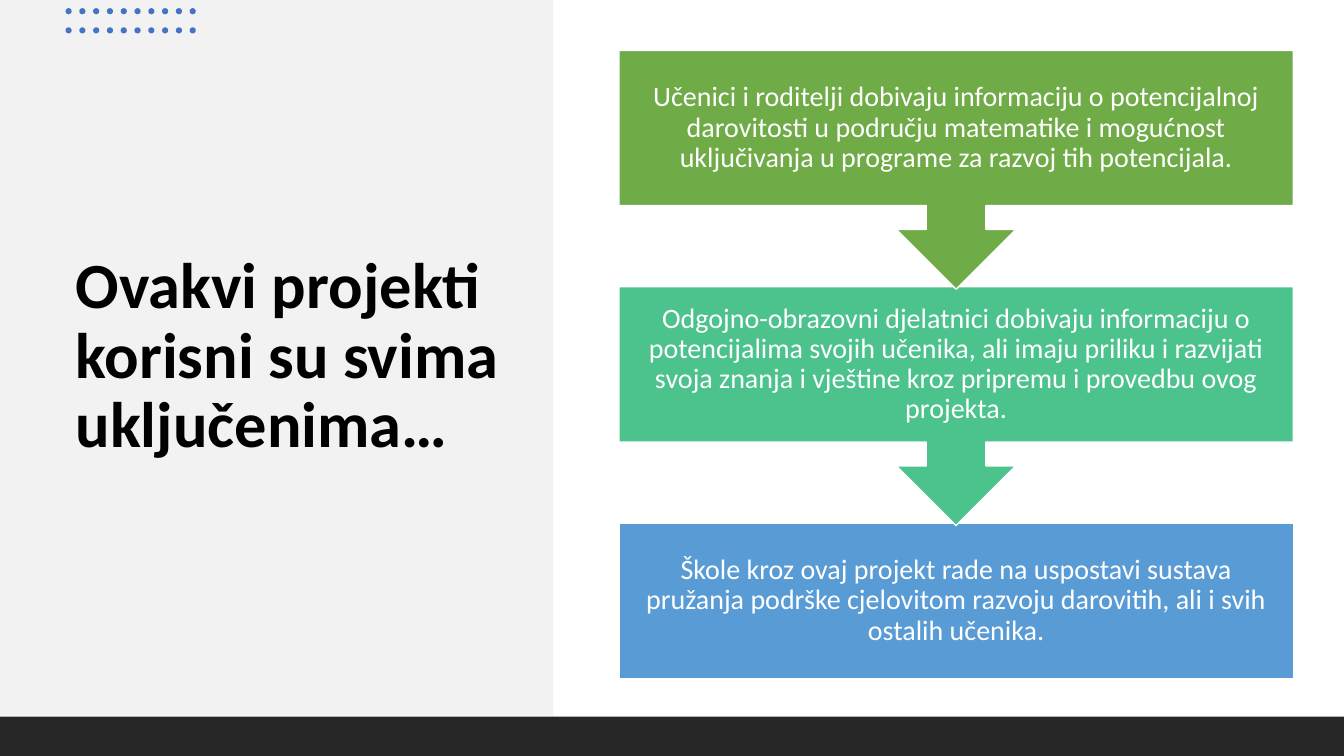
from dataclasses import dataclass

from pptx import Presentation
from pptx import util as u
from pptx.dml.color import RGBColor
from pptx.enum import shapes, text

Pt = u.Pt
MSO = shapes.MSO_SHAPE
FONT = "Calibri"
COLORS = {
    "panel": "F2F2F2",
    "footer": "262626",
    "dot": "4472C4",
    "green": "6FAB46",
    "teal": "4CC38C",
    "blue": "599BD5",
    "white": "FFFFFF",
    "black": "000000",
}
STEP_LEFT, STEP_TOP, STEP_WIDTH = 442.1, 36, 481.7
STEP_PITCH, BOX_HEIGHT, CALLOUT_HEIGHT = 168.9, 110.9, 170.6
DOT_COLUMNS, DOT_ROWS, DOT_SIZE = 10, 2, 4.4
DOT_LEFT, DOT_TOP, DOT_PITCH_X, DOT_PITCH_Y = 46.8, 5.8, 9.85, 13.7


@dataclass(frozen=True)
class Step:
    wording: str
    color: str
    shape: MSO
    height: float


STEPS = [
    Step("Učenici i roditelji dobivaju informaciju o potencijalnoj darovitosti "
         "u području matematike i mogućnost uključivanja u programe za razvoj "
         "tih potencijala.", "green", MSO.DOWN_ARROW_CALLOUT, CALLOUT_HEIGHT),
    Step("Odgojno-obrazovni djelatnici dobivaju informaciju o potencijalima "
         "svojih učenika, ali imaju priliku i razvijati svoja znanja i vještine "
         "kroz pripremu i provedbu ovog projekta.", "teal",
         MSO.DOWN_ARROW_CALLOUT, CALLOUT_HEIGHT),
    Step("Škole kroz ovaj projekt rade na uspostavi sustava pružanja podrške "
         "cjelovitom razvoju darovitih, ali i svih ostalih učenika.", "blue",
         MSO.RECTANGLE, BOX_HEIGHT),
]


def rgb(name: str) -> RGBColor:
    return RGBColor.from_string(COLORS[name])


def add_block(parent, kind: MSO, left: float, top: float, width: float,
              height: float, color: str, line: str | None = None):
    sp = parent.add_shape(kind, Pt(left), Pt(top), Pt(width), Pt(height))
    sp.shadow.inherit = False
    sp.fill.solid()
    sp.fill.fore_color.rgb = rgb(color)
    if line:
        sp.line.color.rgb = rgb(line)
        sp.line.width = Pt(1)
    else:
        sp.line.fill.background()
    return sp


def write(sp, wording: str, *, size: float, color: str, bold: bool = False,
          align=text.PP_ALIGN.LEFT, inset_x: float = 7.2,
          inset_y: float = 3.6) -> None:
    tf = sp.text_frame
    tf.word_wrap = True
    tf.auto_size = text.MSO_AUTO_SIZE.NONE
    tf.vertical_anchor = text.MSO_ANCHOR.MIDDLE
    tf.margin_left = tf.margin_right = Pt(inset_x)
    tf.margin_top = tf.margin_bottom = Pt(inset_y)
    p = tf.paragraphs[0]
    p.alignment = align
    p.line_spacing = 0.9
    r = p.add_run()
    r.text = wording
    r.font.name = FONT
    r.font.size = Pt(size)
    r.font.bold = bold
    r.font.color.rgb = rgb(color)


def add_title(slide, wording: str) -> None:
    sp = slide.shapes.title
    sp.left, sp.top, sp.width, sp.height = Pt(46.8), Pt(95), Pt(334), Pt(320.4)
    write(sp, wording, size=46, color="black", bold=True)
    slide.shapes._spTree.append(sp._element)


def add_dots(slide) -> None:
    group = slide.shapes.add_group_shape()
    for row in range(DOT_ROWS):
        for column in range(DOT_COLUMNS):
            add_block(group.shapes, MSO.OVAL, DOT_LEFT + column * DOT_PITCH_X,
                      DOT_TOP + row * DOT_PITCH_Y, DOT_SIZE, DOT_SIZE, "dot")


def add_step(slide, index: int, step: Step) -> None:
    sp = add_block(slide.shapes, step.shape, STEP_LEFT,
                   STEP_TOP + index * STEP_PITCH, STEP_WIDTH, step.height,
                   step.color, line="white")
    for i, value in enumerate((0.25, 0.25, 0.25, 0.65)[:len(sp.adjustments)]):
        sp.adjustments[i] = value
    write(sp, step.wording, size=20, color="white",
          align=text.PP_ALIGN.CENTER, inset_x=11.5, inset_y=11.5)


def main() -> None:
    prs = Presentation()
    prs.slide_width, prs.slide_height = Pt(960), Pt(540)
    slide = prs.slides.add_slide(prs.slide_layouts[5])
    add_block(slide.shapes, MSO.RECTANGLE, 0, 0, 395.3, 511.2, "panel")
    add_title(slide, "Ovakvi projekti korisni su svima uključenima…")
    add_dots(slide)
    add_block(slide.shapes, MSO.RECTANGLE, 0, 511.8, 960, 28.2, "footer")
    for index, step in reversed(list(enumerate(STEPS))):
        add_step(slide, index, step)
    prs.save("out.pptx")


if __name__ == "__main__":
    main()
